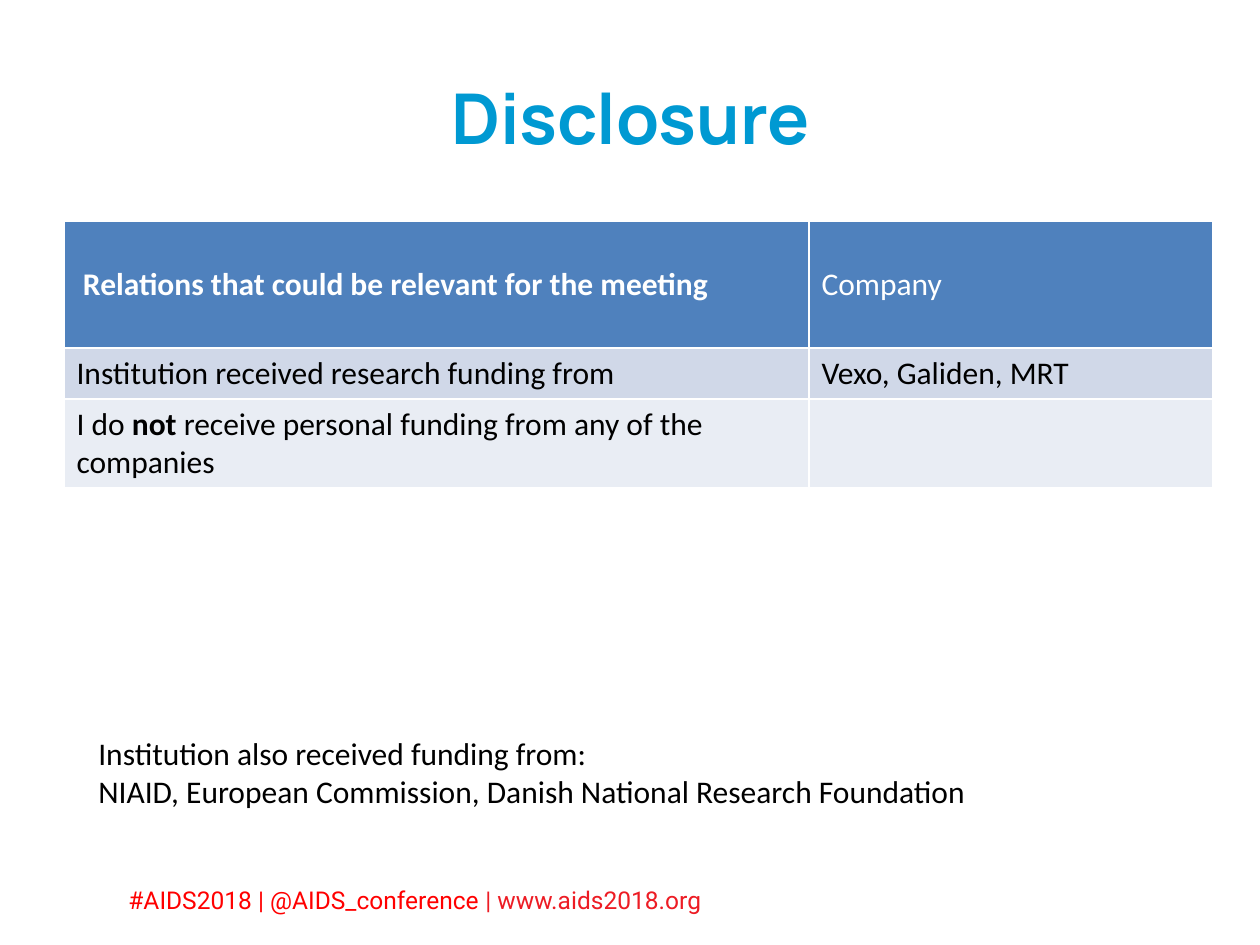
import pptx
import pptx.dml.color
import pptx.enum.text
import pptx.oxml
import pptx.oxml.ns
import pptx.util

PX = pptx.util.Inches(1) // 126
WHITE, BLACK = "FFFFFF", "000000"


def rgb(value):
    return pptx.dml.color.RGBColor.from_string(value)


def set_font(font, name, size, color, bold=False):
    font.name = name
    font.size = pptx.util.Pt(size)
    font.bold = bold
    font.color.rgb = rgb(color)


def place(sp, box):
    sp.left, sp.top, sp.width, sp.height = (v * PX for v in box)


def add_title(slide, box, text):
    sp = slide.shapes.title
    place(sp, box)
    tf = sp.text_frame
    tf.text = text
    tf.vertical_anchor = pptx.enum.text.MSO_ANCHOR.MIDDLE
    p = tf.paragraphs[0]
    p.alignment = pptx.enum.text.PP_ALIGN.CENTER
    set_font(p.font, "Manrope", 40, "0099D2", True)


def add_text_box(slide, box):
    tf = slide.shapes.add_textbox(*(v * PX for v in box)).text_frame
    tf.word_wrap = True
    return tf


def add_borders(cell, color, points):
    tc_pr = cell._tc.get_or_add_tcPr()
    for side in ("lnL", "lnR", "lnT", "lnB"):
        tc_pr.append(pptx.oxml.parse_xml(
            f'<a:{side} {pptx.oxml.ns.nsdecls("a")} w="{pptx.util.Pt(points)}">'
            f'<a:solidFill><a:srgbClr val="{color}"/></a:solidFill></a:{side}>'))


def add_disclosure_table(slide, box, col_widths, row_heights, rows, fills):
    table = slide.shapes.add_table(
        len(rows), len(col_widths), *(v * PX for v in box)).table
    for col, width in zip(table.columns, col_widths):
        col.width = width * PX
    for row, height in zip(table.rows, row_heights):
        row.height = height * PX
    for i, texts in enumerate(rows):
        for j, runs in enumerate(texts):
            cell = table.cell(i, j)
            cell.vertical_anchor = pptx.enum.text.MSO_ANCHOR.MIDDLE
            add_borders(cell, WHITE, 1)
            cell.fill.solid()
            cell.fill.fore_color.rgb = rgb(fills[i])
            p = cell.text_frame.paragraphs[0]
            set_font(p.font, "Calibri", 18, BLACK if i else WHITE)
            for text, bold in runs:
                r = p.add_run()
                r.text = text
                set_font(r.font, "Calibri", 18, BLACK if i else WHITE, bold)
    # The first heading is set in a little further
    table.cell(0, 0).margin_left = 19 * PX


def add_funding_note(slide, box, lines):
    tf = add_text_box(slide, box)
    tf.text = "\n".join(lines)
    for p in tf.paragraphs:
        set_font(p.font, "Calibri", 18, BLACK)


def add_footer(slide, box, parts):
    p = add_text_box(slide, box).paragraphs[0]
    for text, color in parts:
        r = p.add_run()
        r.text = text
        set_font(r.font, "Roboto", 14, color)


def main():
    prs = pptx.Presentation()
    prs.slide_width, prs.slide_height = 1260 * PX, 945 * PX
    slide = prs.slides.add_slide(prs.slide_layouts[5])

    # Footer with conference handles
    add_footer(slide, (116, 879, 926, 43), [
        ("#AIDS2018 | @AIDS_conference ", "FF0000"),
        ("| www.aids2018.org", "ED1C24")])

    add_title(slide, (78, 38, 1105, 158), "Disclosure")

    # Relations and companies
    add_disclosure_table(
        slide, (64, 221, 1149, 267), (745, 404), (127, 51, 89),
        [[[("Relations that could be relevant for the meeting", True)],
          [("Company", False)]],
         [[("Institution received research funding from", False)],
          [("Vexo, Galiden, MRT", False)]],
         [[("I do", False), (" not ", True),
           ("receive personal funding from any of the companies", False)],
          []]],
        ("4F81BD", "D0D8E8", "E9EDF4"))

    # Other funding
    add_funding_note(slide, (86, 728, 937, 89), [
        "Institution also received funding from:",
        "NIAID, European Commission, Danish National Research Foundation"])

    prs.save("out.pptx")


if __name__ == "__main__":
    main()
